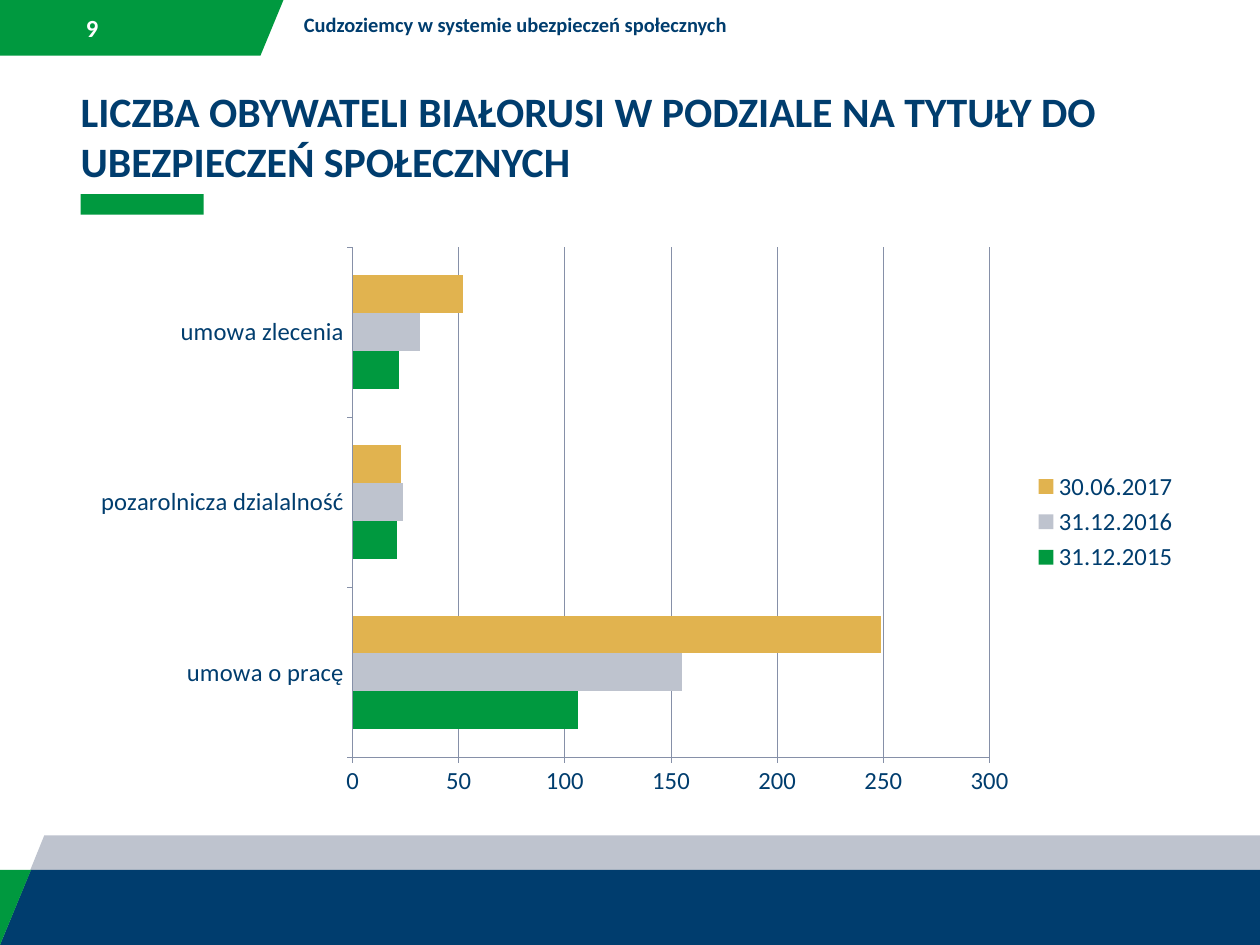
import pptx
import pptx.util
import pptx.chart.data
import pptx.dml.color
import pptx.enum.chart
import pptx.enum.shapes
import pptx.enum.text
import pptx.oxml

Pt = pptx.util.Pt
FONT = "Calibri"
COLORS = {"green": "00993F", "grey": "BEC3CE", "navy": "003D6E",
          "gold": "E1B34F", "white": "FFFFFF", "grid": "8690A8"}

HEADER = "Cudzoziemcy w systemie ubezpieczeń społecznych"
TITLE = ("LICZBA OBYWATELI BIAŁORUSI W PODZIALE NA TYTUŁY "
         "DO UBEZPIECZEŃ SPOŁECZNYCH")
PAGE = "9"
CATEGORIES = ["umowa o pracę", "pozarolnicza dzialalność", "umowa zlecenia"]
SERIES = [("31.12.2015", (106, 21, 22), "green"),
          ("31.12.2016", (155, 24, 32), "grey"),
          ("30.06.2017", (249, 23, 52), "gold")]

W, H = 1024, 768
BAND_TOP, NAVY_TOP = 679, 707
OUTLINES = [
    ("green", [(0, 0), (230.4, 0), (211.7, 45.2), (0, 45.2)]),
    ("grey", [(0, H), (36, BAND_TOP), (W, BAND_TOP), (W, H)]),
]
NAVY_BAND = ("navy", [(0, H), (25.2, NAVY_TOP), (W, NAVY_TOP), (W, H)])
CORNER = ("green", [(0, NAVY_TOP), (25.2, NAVY_TOP), (0, H)])
ACCENT = (65.5, 157.7, 100, 16.7)
HEADER_BOX = (239.8, 5.8, 725.8, 30.2)
TITLE_BOX = (58.3, 66.2, 907.2, 85)
PAGE_BOX = (65.5, 6.5, 61.2, 32.4)
CHART_BOX = (64.1, 191.5, 901.4, 465.1)


def rgb(name):
    return pptx.dml.color.RGBColor.from_string(COLORS[name])


def paint(sp, color):
    sp.shadow.inherit = False
    sp.fill.solid()
    sp.fill.fore_color.rgb = rgb(color)
    sp.line.fill.background()


def add_outline(s, color, points):
    points = [(Pt(x), Pt(y)) for x, y in points]
    builder = s.shapes.build_freeform(*points[0], scale=1.0)
    builder.add_line_segments(points[1:], close=True)
    paint(builder.convert_to_shape(), color)


def write(sp, box, text, size, color, anchor="TOP"):
    sp.left, sp.top, sp.width, sp.height = map(Pt, box)
    tf = sp.text_frame
    tf.word_wrap = True
    tf.auto_size = pptx.enum.text.MSO_AUTO_SIZE.NONE
    tf.vertical_anchor = pptx.enum.text.MSO_ANCHOR[anchor]
    p = tf.paragraphs[0]
    pPr = p._p.get_or_add_pPr()
    pPr.set("marL", "0")
    pPr.set("indent", "0")
    pPr.append(pptx.oxml.parse_xml(
        '<a:buNone xmlns:a="http://schemas.openxmlformats.org/drawingml/2006/main"/>'))
    p.alignment = pptx.enum.text.PP_ALIGN.LEFT
    p.space_before = Pt(0)
    r = p.add_run()
    r.text = text
    r.font.name, r.font.size, r.font.bold = FONT, Pt(size), True
    r.font.color.rgb = rgb(color)
    return tf


def add_contract_chart(s):
    data = pptx.chart.data.CategoryChartData()
    data.categories = CATEGORIES
    for name, values, _ in SERIES:
        data.add_series(name, values)
    chart = s.shapes.add_chart(pptx.enum.chart.XL_CHART_TYPE.BAR_CLUSTERED,
                               *map(Pt, CHART_BOX), data).chart
    chart.has_title = False
    chart.font.name, chart.font.size = FONT, Pt(20)
    chart.font.color.rgb = rgb("navy")

    chart.has_legend = True
    chart.legend.position = pptx.enum.chart.XL_LEGEND_POSITION.RIGHT
    chart.legend.include_in_layout = False

    plot = chart.plots[0]
    plot.gap_width, plot.overlap = 150, 0
    plot.vary_by_categories = False
    for series, (_, _, color) in zip(plot.series, SERIES):
        series.format.fill.solid()
        series.format.fill.fore_color.rgb = rgb(color)

    scale = chart.value_axis
    scale.minimum_scale, scale.maximum_scale, scale.major_unit = 0, 300, 50
    scale.has_major_gridlines = True
    for axis in (scale, chart.category_axis):
        axis.major_tick_mark = pptx.enum.chart.XL_TICK_MARK.OUTSIDE
    for part in (scale, chart.category_axis, scale.major_gridlines):
        part.format.line.color.rgb = rgb("grid")
        part.format.line.width = Pt(0.75)


def main():
    prs = pptx.Presentation()
    prs.slide_width, prs.slide_height = Pt(W), Pt(H)
    s = prs.slides.add_slide(prs.slide_layouts[1])

    for color, points in OUTLINES + [NAVY_BAND, CORNER]:
        add_outline(s, color, points)
    accent = s.shapes.add_shape(pptx.enum.shapes.MSO_SHAPE.RECTANGLE,
                                *map(Pt, ACCENT))
    paint(accent, "green")

    write(s.shapes.title, TITLE_BOX, TITLE, 34, "navy")
    write(s.placeholders[1], HEADER_BOX, HEADER, 16.6, "navy")
    page = s.shapes.add_textbox(*map(Pt, PAGE_BOX))
    tf = write(page, PAGE_BOX, PAGE, 20, "white", "MIDDLE")
    tf.margin_left = tf.margin_right = tf.margin_top = tf.margin_bottom = Pt(4.3)

    add_contract_chart(s)
    prs.save("out.pptx")


if __name__ == "__main__":
    main()
